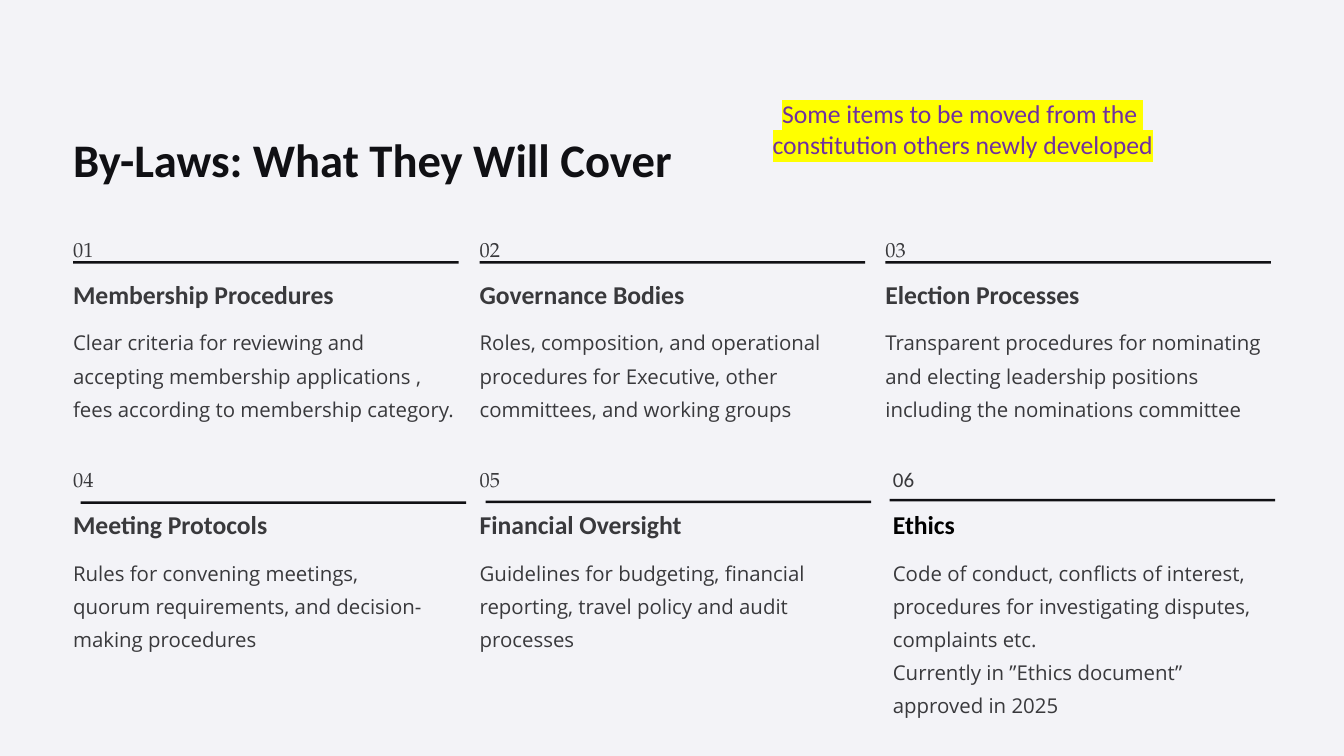
"""Build the by-laws overview slide: a title, a note and six numbered topics."""
from dataclasses import dataclass

from lxml.etree import SubElement
from pptx import Presentation
from pptx.dml.color import RGBColor
from pptx.enum.shapes import MSO_SHAPE
from pptx.enum.text import MSO_ANCHOR, MSO_AUTO_SIZE, PP_ALIGN
from pptx.oxml.ns import qn
from pptx.util import Inches, Pt


@dataclass(frozen=True)
class Theme:
    paper: str = "F3F3F7"
    ink: str = "101014"
    grey: str = "39393C"
    black: str = "000000"
    purple: str = "7030A0"
    marker: str = "FFFF00"
    head: str = "Calibri"
    body: str = "Open Sans"
    serif: str = "TeX Gyre Pagella"
    title_size: float = 40
    head_size: float = 22
    number_size: float = 18
    body_size: float = 17.5


T = Theme()


def place(s, x, y, w, h):
    s.left, s.top, s.width, s.height = (Inches(v) for v in (x, y, w, h))


def write(s, text, font, size, color, leading=None, bold=False, align=PP_ALIGN.LEFT):
    tf = s.text_frame
    tf.text = text
    tf.word_wrap = True
    tf.auto_size = MSO_AUTO_SIZE.NONE
    tf.vertical_anchor = MSO_ANCHOR.TOP
    tf.margin_left = tf.margin_right = tf.margin_top = tf.margin_bottom = 0
    for p in tf.paragraphs:
        p.alignment = align
        if leading:
            p.line_spacing = Pt(leading)
        for r in p.runs:
            r.font.name, r.font.size, r.font.bold = font, Pt(size), bold
            r.font.color.rgb = RGBColor.from_string(color)


prs = Presentation()
prs.slide_width, prs.slide_height = Inches(16), Inches(9)
slide = prs.slides.add_slide(prs.slide_layouts[5])
slide.background.fill.solid()
slide.background.fill.fore_color.rgb = RGBColor.from_string(T.paper)
shapes = slide.shapes

title = shapes.title
place(title, 0.87, 1.45, 8.92, 0.78)
write(title, "By-Laws: What They Will Cover", T.head, T.title_size, T.ink, 55.5, True)

topics = [
    ("Membership Procedures",
     "Clear criteria for reviewing and accepting membership applications , "
     "fees according to membership category."),
    ("Governance Bodies",
     "Roles, composition, and operational procedures for Executive, other "
     "committees, and working groups"),
    ("Election Processes",
     "Transparent procedures for nominating and electing leadership positions "
     "including the nominations committee"),
    ("Meeting Protocols",
     "Rules for convening meetings, quorum requirements, and decision-making procedures"),
    ("Financial Oversight",
     "Guidelines for budgeting, financial reporting, travel policy and audit processes"),
    ("Ethics",
     "Code of conduct, conflicts of interest, procedures for investigating disputes, "
     "complaints etc.\nCurrently in ”Ethics document” approved in 2025"),
]
text_lefts = [0.87, 5.71, 10.54, 0.87, 5.71, 10.63]
rules = [(0.87, 3.11), (5.71, 3.11), (10.54, 3.11),
         (0.96, 5.97), (5.78, 5.96), (10.59, 5.94)]
column_width = 4.59

for i, ((heading, body), x, (rule_x, rule_y)) in enumerate(zip(topics, text_lefts, rules)):
    y = 2.72 + i // 3 * 2.74
    last = i == len(topics) - 1
    number_style = (T.head, T.number_size) if last else (T.serif, T.body_size)
    body_width = 4.23 if i == 3 else 4.4 if last else column_width
    parts = [
        (f"{i + 1:02}", y, 0.5, 0.31, *number_style, T.grey, 28.5, False),
        (heading, y + 0.58, 3.52, 0.39, T.head, T.head_size,
         T.black if last else T.grey, 27.5, True),
        (body, y + 1.11, body_width, 2 if last else 1.19,
         T.body, T.body_size, T.grey, 28.5, False),
    ]
    for text, top, w, h, *style in parts:
        s = shapes.add_textbox(Inches(x), Inches(top), Inches(w), Inches(h))
        write(s, text, *style)

    rule = shapes.add_shape(MSO_SHAPE.RECTANGLE, Inches(rule_x), Inches(rule_y),
                            Inches(column_width), Inches(0.03))
    rule.shadow.inherit = False
    rule.fill.solid()
    rule.fill.fore_color.rgb = RGBColor.from_string(T.ink)
    rule.line.fill.background()

note = shapes.add_textbox(Inches(9.07), Inches(1.17), Inches(4.78), Inches(0.74))
write(note, "Some items to be moved from the \nconstitution others newly developed",
      T.head, T.head_size, T.purple, align=PP_ALIGN.CENTER)
for p in note.text_frame.paragraphs:
    for r in p.runs:
        rPr = r.font._element
        highlight = SubElement(rPr, qn("a:highlight"))
        SubElement(highlight, qn("a:srgbClr")).set("val", T.marker)
        rPr.find(qn("a:solidFill")).addnext(highlight)

prs.save("out.pptx")
